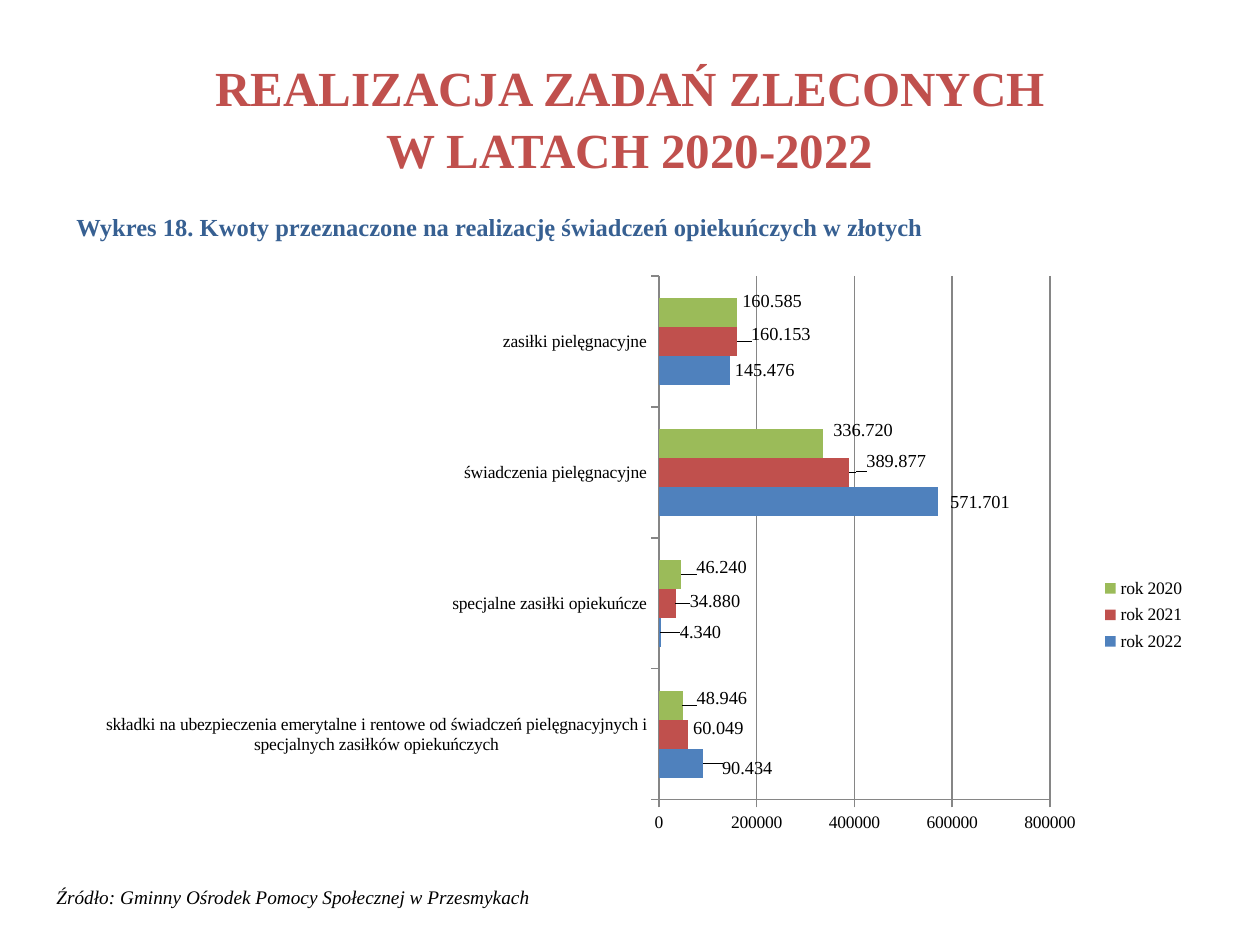
import pptx
import pptx.chart.data
import pptx.dml.color
import pptx.enum.chart
import pptx.enum.text
import pptx.oxml
import pptx.oxml.ns
import pptx.util

PX = 914400 / 126
FONT = "Times New Roman"
COLORS = {
    "title": "C0504D", "caption": "376092", "text": "000000", "line": "868686",
    "rok 2022": "4F81BD", "rok 2021": "C0504D", "rok 2020": "9BBB59",
}
CATEGORIES = [
    "składki na ubezpieczenia emerytalne i rentowe od świadczeń pielęgnacyjnych i "
    "specjalnych zasiłków opiekuńczych",
    "specjalne zasiłki opiekuńcze",
    "świadczenia pielęgnacyjne",
    "zasiłki pielęgnacyjne",
]
# Each entry: amount, then the px shift of its label from the end of the bar
AMOUNTS = {
    "rok 2022": [(90434, 14, 5), (4340, 14, 0), (571701, 7, 1), (145476, 0, 0)],
    "rok 2021": [(60049, 0, -6), (34880, 9, -2), (389877, 12, -11), (160153, 9, -7)],
    "rok 2020": [(48946, 9, -7), (46240, 10, -7), (336720, 5, -13), (160585, 0, -11)],
}


def px(length):
    return pptx.util.Emu(round(length * PX))


def rgb(name):
    return pptx.dml.color.RGBColor.from_string(COLORS[name])


def format_font(font, size, color="text", **values):
    values = {"name": FONT, "size": pptx.util.Pt(size), **values}
    for key, value in values.items():
        setattr(font, key, value)
    font.color.rgb = rgb(color)


def format_line(line):
    line.color.rgb = rgb("line")
    line.width = pptx.util.Pt(0.75)


def place_title(page, box):
    title = page.shapes.title
    for key, value in zip(("left", "top", "width", "height"), box):
        setattr(title, key, px(value))
    frame = title.text_frame
    frame.auto_size = pptx.enum.text.MSO_AUTO_SIZE.NONE
    frame.vertical_anchor = pptx.enum.text.MSO_ANCHOR.MIDDLE
    para = frame.paragraphs[0]
    para.text = "REALIZACJA ZADAŃ ZLECONYCH\vW LATACH 2020-2022"
    para.alignment = pptx.enum.text.PP_ALIGN.CENTER
    para.line_spacing = 1.05
    for span in para.runs:
        format_font(span.font, 28, "title", bold=True)


def place_text(page, box, text, size, color, **values):
    frame = page.shapes.add_textbox(*map(px, box)).text_frame
    frame.word_wrap = True
    span = frame.paragraphs[0].add_run()
    span.text = text
    format_font(span.font, size, color, **values)


def manual_layout(box, **fractions):
    """Layout element from px lengths within a chart box."""
    sizes = {"x": box[2], "w": box[2], "y": box[3], "h": box[3]}
    modes = {"layoutTarget": "inner", "xMode": "edge", "yMode": "edge"}
    parts = []
    if "w" in fractions:
        parts += [f'<c:{tag} val="{value}"/>' for tag, value in modes.items()]
    parts += [f'<c:{tag} val="{value / sizes[tag]:.4f}"/>' for tag, value in fractions.items()]
    return pptx.oxml.parse_xml(
        f'<c:layout {pptx.oxml.ns.nsdecls("c")}><c:manualLayout>'
        f'{"".join(parts)}</c:manualLayout></c:layout>')


def label_points(series, box):
    labels = series.data_labels
    labels.show_value = True
    labels.position = pptx.enum.chart.XL_LABEL_POSITION.OUTSIDE_END
    format_font(labels.font, 10.5)
    for index, (amount, shift_x, shift_y) in enumerate(AMOUNTS[series.name]):
        label = series.points[index].data_label
        span = label.text_frame.paragraphs[0].add_run()
        span.text = f"{amount:,}".replace(",", ".")
        format_font(span.font, 10.5)
        label.position = pptx.enum.chart.XL_LABEL_POSITION.OUTSIDE_END
        if shift_x or shift_y:
            element = labels._element.xpath(f"c:dLbl[c:idx/@val='{index}']")[0]
            element.insert(1, manual_layout(box, x=shift_x, y=shift_y))


def place_chart(page, box):
    data = pptx.chart.data.CategoryChartData(number_format="General")
    data.categories = CATEGORIES
    for name, entries in AMOUNTS.items():
        data.add_series(name, [entry[0] for entry in entries])
    kind = pptx.enum.chart.XL_CHART_TYPE.BAR_CLUSTERED
    chart = page.shapes.add_chart(kind, *map(px, box), data).chart
    chart.has_title = False
    format_font(chart.font, 18, name="Calibri")

    # Axes
    for axis in (chart.category_axis, chart.value_axis):
        axis.major_tick_mark = pptx.enum.chart.XL_TICK_MARK.OUTSIDE
        format_font(axis.tick_labels.font, 10)
        format_line(axis.format.line)
    chart.category_axis.has_major_gridlines = False
    values = chart.value_axis
    values.minimum_scale, values.maximum_scale, values.major_unit = 0, 800000, 200000
    values.has_major_gridlines = True
    format_line(values.major_gridlines.format.line)

    # Bars
    plot = chart.plots[0]
    plot.gap_width = 150
    plot.overlap = 0
    plot.vary_by_categories = False
    for series in plot.series:
        series.format.fill.solid()
        series.format.fill.fore_color.rgb = rgb(series.name)
        label_points(series, box)

    # Plot area and legend
    area = chart._chartSpace.chart.plotArea
    for old in area.xpath("c:layout"):
        area.remove(old)
    area.insert(0, manual_layout(box, x=575, y=11, w=391, h=524))
    chart.has_legend = True
    legend = chart.legend
    legend.position = pptx.enum.chart.XL_LEGEND_POSITION.RIGHT
    legend.include_in_layout = False
    format_font(legend.font, 10)
    layout = manual_layout(box, x=1011, y=307, w=97, h=86)
    layout[0].remove(layout[0][0])
    for old in legend._element.xpath("c:layout"):
        legend._element.remove(old)
    legend._element.xpath("c:legendPos")[0].addnext(layout)


def main():
    deck = pptx.Presentation()
    deck.slide_width, deck.slide_height = px(1260), px(945)
    page = deck.slides.add_slide(deck.slide_layouts[5])
    place_title(page, (63, 38, 1134, 157))
    place_text(page, (64, 206, 1133, 63),
               "Wykres 18. Kwoty przeznaczone na realizację świadczeń opiekuńczych w złotych",
               14, "caption", bold=True)
    place_text(page, (44, 879, 630, 37),
               "Źródło: Gminny Ośrodek Pomocy Społecznej w Przesmykach",
               11, "text", italic=True)
    place_chart(page, (84, 265, 1113, 580))
    deck.save("out.pptx")


if __name__ == "__main__":
    main()
